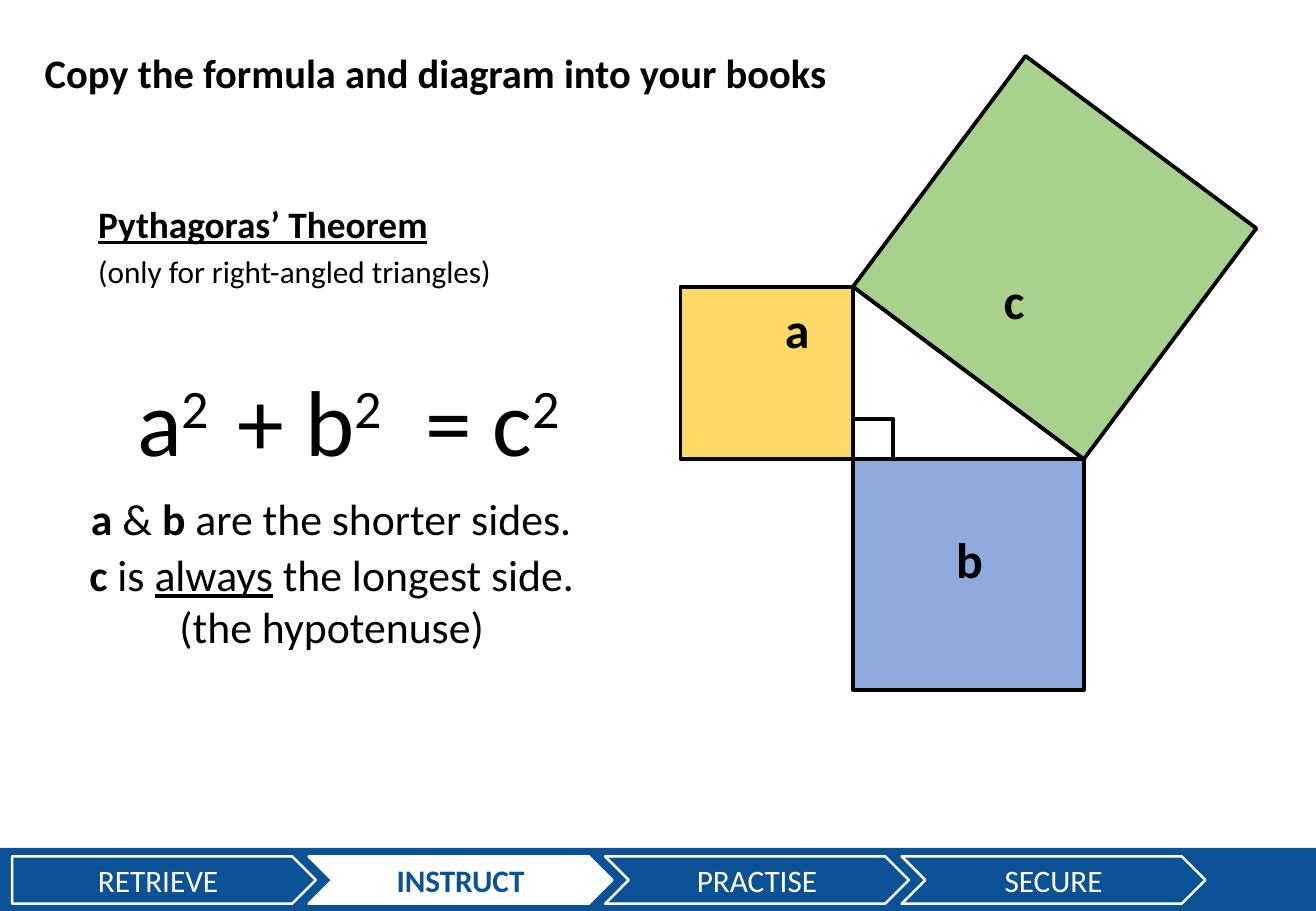
from math import atan2, degrees, hypot

from pptx import Presentation
from pptx.dml.color import RGBColor
from pptx.enum.shapes import MSO_SHAPE
from pptx.enum.text import MSO_ANCHOR, MSO_AUTO_SIZE, PP_ALIGN
from pptx.util import Inches, Pt

WIDTH, HEIGHT = 10.83, 7.5
FONT = "Calibri"
BLACK, WHITE, NAVY = "000000", "FFFFFF", "0B5196"
BLUE, YELLOW, GREEN = "8FAADC", "FFD966", "A9D18E"

STAGES = ["RETRIEVE", "INSTRUCT", "PRACTISE", "SECURE"]
CURRENT_STAGE = "INSTRUCT"
STAGE_LEFT, STAGE_TOP, STAGE_PITCH = 0.1, 7.05, 2.44
STAGE_WIDTH, STAGE_HEIGHT = 2.5, 0.39
BAR_TOP = 6.98

# Right-angled triangle: left edge, top edge and the two shorter sides
CORNER_X, APEX_Y, SIDE_A, SIDE_B = 7.02, 2.36, 1.42, 1.9
RIGHT_ANGLE = 0.33

# (left, top, width, height), size, alignment, paragraphs of (text, marks)
# Marks: b bold, u underlined, ^ superscript
TEXTS = [
    ((0.71, 1.61, 2.94, 0.47), 22.1, PP_ALIGN.LEFT, [[("Pythagoras’ Theorem", "bu")]]),
    ((0.71, 2.03, 3.47, 0.41), 18.5, PP_ALIGN.LEFT,
     [[("(only for right-angled triangles)", "")]]),
    ((6.36, 2.41, 0.41, 0.6), 29.5, PP_ALIGN.LEFT, [[("a", "b")]]),
    ((7.77, 4.3, 0.42, 0.6), 29.5, PP_ALIGN.LEFT, [[("b", "b")]]),
    ((8.16, 2.17, 0.38, 0.6), 29.5, PP_ALIGN.LEFT, [[("c", "b")]]),
    ((1.03, 2.94, 0.84, 1.03), 55.4, PP_ALIGN.LEFT, [[("a", ""), ("2", "^")]]),
    ((1.86, 2.94, 1.44, 1.03), 55.4, PP_ALIGN.LEFT, [[("+ b", ""), ("2", "^")]]),
    ((3.4, 2.94, 1.36, 1.03), 55.4, PP_ALIGN.LEFT, [[("= c", ""), ("2", "^")]]),
    ((0.65, 4, 4.19, 0.54), 25.9, PP_ALIGN.LEFT,
     [[("a", "b"), (" & ", ""), ("b", "b"), (" are the shorter sides.", "")]]),
    ((0.62, 4.46, 4.22, 0.97), 25.9, PP_ALIGN.CENTER,
     [[("c", "b"), (" is ", ""), ("always", "u"), (" the longest side.", "")],
      [("(the hypotenuse)", "")]]),
]
HEADING = ((0.27, 0.35, 6.66, 0.5), 24, PP_ALIGN.LEFT,
           [[("Copy the formula and diagram into your books", "b")]])


def color(value):
    return RGBColor.from_string(value)


def set_font(paragraph, size, value):
    paragraph.font.name = FONT
    paragraph.font.size = Pt(size)
    paragraph.font.color.rgb = color(value)


def add_outline(slide, kind, box, fill=None, line=None, weight=2.25):
    """Add a preset shape; no fill or no line when its colour is None."""
    shape = slide.shapes.add_shape(kind, *map(Inches, box))
    shape.shadow.inherit = False
    if fill:
        shape.fill.solid()
        shape.fill.fore_color.rgb = color(fill)
    else:
        shape.fill.background()
    if line:
        shape.line.color.rgb = color(line)
        shape.line.width = Pt(weight)
    else:
        shape.line.fill.background()
    return shape


def add_text(slide, box, size, alignment, paragraphs, wrap=False):
    frame = slide.shapes.add_textbox(*map(Inches, box)).text_frame
    frame.word_wrap = wrap
    frame.auto_size = MSO_AUTO_SIZE.SHAPE_TO_FIT_TEXT
    for index, runs in enumerate(paragraphs):
        paragraph = frame.add_paragraph() if index else frame.paragraphs[0]
        paragraph.alignment = alignment
        set_font(paragraph, size, BLACK)
        for text, marks in runs:
            run = paragraph.add_run()
            run.text = text
            run.font.bold = "b" in marks
            run.font.underline = "u" in marks
            if "^" in marks:
                run._r.get_or_add_rPr().set("baseline", "30000")


def add_stage_bar(slide):
    add_outline(slide, MSO_SHAPE.RECTANGLE, (0, BAR_TOP, WIDTH, HEIGHT - BAR_TOP), NAVY)
    for index, name in enumerate(STAGES):
        current = name == CURRENT_STAGE
        kind = MSO_SHAPE.CHEVRON if index else MSO_SHAPE.PENTAGON
        box = (STAGE_LEFT + index * STAGE_PITCH, STAGE_TOP, STAGE_WIDTH, STAGE_HEIGHT)
        shape = add_outline(slide, kind, box, WHITE if current else NAVY, WHITE, 1.5)
        shape.text_frame.vertical_anchor = MSO_ANCHOR.MIDDLE
        paragraph = shape.text_frame.paragraphs[0]
        paragraph.text = name
        paragraph.alignment = PP_ALIGN.CENTER
        set_font(paragraph, 18.5, NAVY if current else WHITE)
        paragraph.font.bold = current


def add_diagram(slide):
    """Draw the triangle with a square on each of its sides."""
    base_y = APEX_Y + SIDE_A
    side_c = hypot(SIDE_A, SIDE_B)
    center_x = CORNER_X + (SIDE_B + SIDE_A) / 2
    center_y = APEX_Y + (SIDE_A - SIDE_B) / 2
    square = MSO_SHAPE.RECTANGLE

    add_outline(slide, MSO_SHAPE.ISOSCELES_TRIANGLE,
                (CORNER_X, APEX_Y, SIDE_B, SIDE_A), line=BLACK).adjustments[0] = 0
    add_outline(slide, square, (CORNER_X, base_y, SIDE_B, SIDE_B), BLUE, BLACK)
    add_outline(slide, square, (CORNER_X - SIDE_A, APEX_Y, SIDE_A, SIDE_A), YELLOW, BLACK)
    hypotenuse_square = add_outline(
        slide, square,
        (center_x - side_c / 2, center_y - side_c / 2, side_c, side_c), GREEN, BLACK)
    hypotenuse_square.rotation = 270 + degrees(atan2(SIDE_A, SIDE_B))
    add_outline(slide, square,
                (CORNER_X, base_y - RIGHT_ANGLE, RIGHT_ANGLE, RIGHT_ANGLE), line=BLACK)


def main():
    presentation = Presentation()
    presentation.slide_width = Inches(WIDTH)
    presentation.slide_height = Inches(HEIGHT)
    slide = presentation.slides.add_slide(presentation.slide_layouts[6])
    add_stage_bar(slide)
    add_diagram(slide)
    for text in TEXTS:
        add_text(slide, *text)
    add_text(slide, *HEADING, wrap=True)
    presentation.save("out.pptx")


if __name__ == "__main__":
    main()
